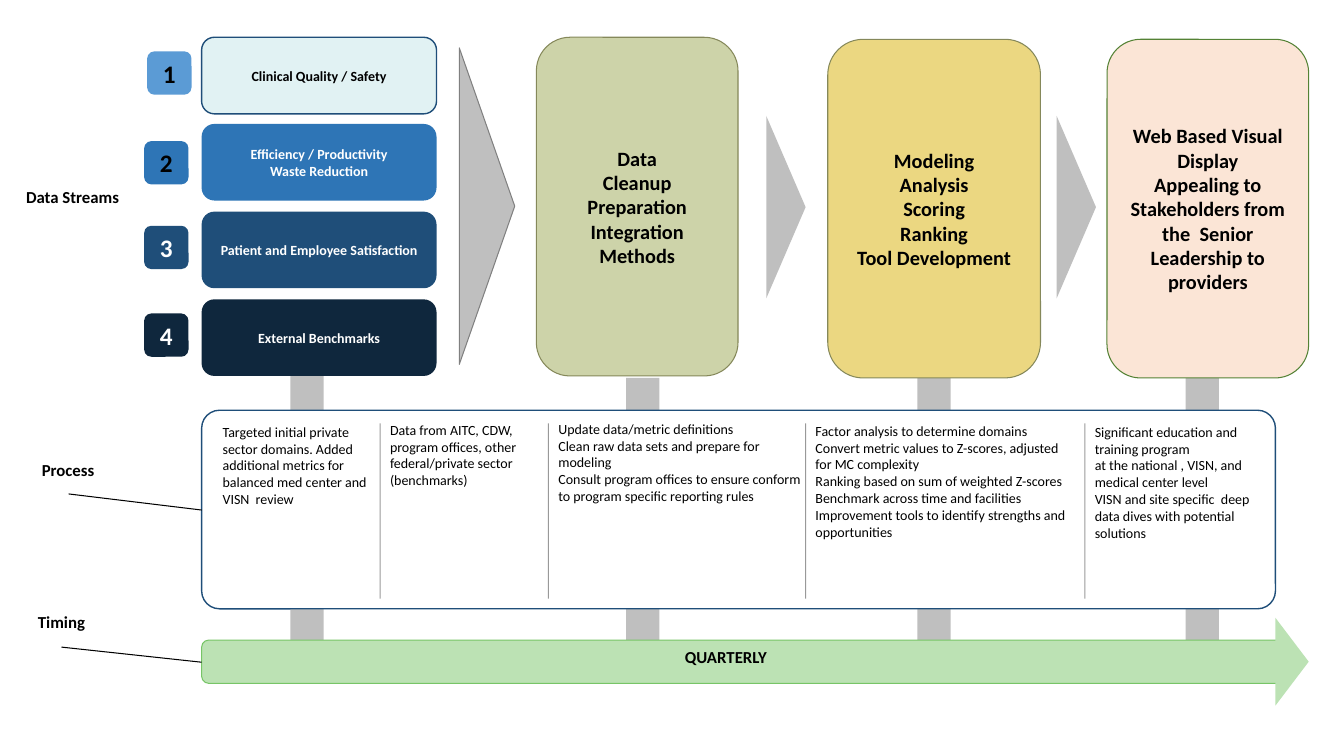
from lxml import etree
from pptx import Presentation
from pptx import util as u
from pptx.dml.color import RGBColor
from pptx.enum import shapes, text
from pptx.oxml.ns import qn

PX = 9144  # EMU in one px, 100 px to the inch
BLACK, WHITE, GREY, NAVY, OLIVE = "000000", "FFFFFF", "BFBFBF", "1F4E79", "85885A"
GREEN = "BCE2B4"

# fill, line, text colour, badge left, badge top, badge fill, digit colour, lines
STREAMS = [
    ("E1F2F3", NAVY, BLACK, 146, 51, "5B9BD5", BLACK, ["Clinical Quality / Safety"]),
    ("2E75B6", None, WHITE, 143, 140, "2E75B6", BLACK,
     ["Efficiency / Productivity", "Waste Reduction"]),
    (NAVY, None, WHITE, 143, 224, NAVY, WHITE, ["Patient and Employee Satisfaction"]),
    ("0F273D", None, WHITE, 143, 311, "0F273D", WHITE, ["External Benchmarks"]),
]

# left, top, width, fill, line, lines
STAGES = [
    (532, 37, 200, "CDD3A9", OLIVE,
     ["Data", "Cleanup", "Preparation", "Integration", "Methods"]),
    (821, 39, 211, "EBD781", OLIVE,
     ["Modeling", "Analysis", "Scoring", "Ranking", "Tool Development"]),
    (1098, 39, 200, "FBE5D6", "548235",
     ["Web Based Visual Display",
      "Appealing to Stakeholders from the  Senior Leadership to providers"]),
]

# left, top, width, height, lines
PROCESS_NOTES = [
    (211, 415, 177, 94,
     ["Targeted initial private sector domains. Added additional metrics for "
      "balanced med center and VISN  review"]),
    (377, 413, 166, 77,
     ["Data from AITC, CDW, program offices, other federal/private sector (benchmarks)"]),
    (544, 412, 266, 94,
     ["Update data/metric definitions",
      "Clean raw data sets and prepare for modeling",
      "Consult program offices to ensure conform to program specific reporting rules"]),
    (799, 414, 277, 128,
     ["Factor analysis to determine domains",
      "Convert metric values to Z-scores, adjusted for MC complexity",
      "Ranking based on sum of weighted Z-scores",
      "Benchmark across time and facilities",
      "Improvement tools to identify strengths and opportunities"]),
    (1076, 415, 189, 128,
     ["Significant education and training program",
      "at the national , VISN, and medical center level",
      "VISN and site specific  deep data dives with potential solutions"]),
]


def rgb(value):
    return RGBColor.from_string(value)


class Board:
    """Holds the text style and the current slide; lengths are in px."""

    font = "Calibri"

    def __init__(self, page):
        self.page = page

    def set_text(self, frame, lines, size, color, bold, align):
        frame.word_wrap = True
        frame.text = "\n".join(lines)
        for para in frame.paragraphs:
            para.alignment = align
            for span in para.runs:
                span.font.name = self.font
                span.font.size = u.Pt(size)
                span.font.bold = bold
                span.font.color.rgb = rgb(color)

    def shape(self, kind, frame, fill, line=None, weight=0.75):
        box = self.page.shapes.add_shape(kind, *(n * PX for n in frame))
        box.shadow.inherit = False
        box.fill.solid()
        box.fill.fore_color.rgb = rgb(fill)
        if line:
            box.line.color.rgb = rgb(line)
            box.line.width = u.Pt(weight)
        else:
            box.line.fill.background()
        return box

    def card(self, frame, fill, line=None, weight=0.75, lines=(), size=10,
             color=BLACK, corner=None):
        box = self.shape(shapes.MSO_SHAPE.ROUNDED_RECTANGLE, frame, fill, line, weight)
        if corner is not None:
            box.adjustments[0] = corner
        if lines:
            box.text_frame.vertical_anchor = text.MSO_ANCHOR.MIDDLE
            self.set_text(box.text_frame, lines, size, color, True, text.PP_ALIGN.CENTER)

    def bar(self, frame):
        self.shape(shapes.MSO_SHAPE.RECTANGLE, frame, GREY)

    def pointer(self, left, top, width, height, fill=GREY, line=None):
        """Triangle pointing right that fills the given area once turned."""
        shift = (height - width) // 2
        frame = (left - shift, top + shift, height, width)
        self.shape(shapes.MSO_SHAPE.ISOSCELES_TRIANGLE, frame, fill, line).rotation = 90

    def label(self, frame, lines, size=12, bold=True, align=text.PP_ALIGN.CENTER):
        box = self.page.shapes.add_textbox(*(n * PX for n in frame))
        self.set_text(box.text_frame, lines, size, BLACK, bold, align)

    def line(self, start, end, opacity=100):
        link = self.page.shapes.add_connector(
            shapes.MSO_CONNECTOR.STRAIGHT, *(n * PX for n in start + end))
        link.line.color.rgb = rgb(BLACK)
        link.line.width = u.Pt(0.75)
        properties = link._element.spPr
        if opacity < 100:
            color = properties.find(".//" + qn("a:srgbClr"))
            etree.SubElement(color, qn("a:alpha")).set("val", str(opacity * 1000))
        etree.SubElement(properties, qn("a:effectLst"))


def draw_flow(board):
    for left, top in ((288, 364), (621, 375), (910, 375), (1176, 375)):
        board.bar((left, top, 33, 635 - top))
    for i, (fill, line, color, x, y, badge, digit, lines) in enumerate(STREAMS):
        board.card((200, 37 + 260 * i // 3, 233, 76), fill, line, 1, lines, 10, color)
        board.card((x, y, 44, 43), badge, lines=[str(i + 1)], size=18, color=digit)
    for left, top, width, fill, line, lines in STAGES:
        board.card((left, top, width, 336), fill, line, lines=lines, size=14.5)
    board.pointer(455, 48, 55, 314, line="808080")
    for left in (760, 1048):
        board.pointer(left, 115, 39, 181)
    board.label((11, 180, 122, 66), ["Data Streams"])


def draw_process(board):
    board.card((200, 407, 1065, 197), WHITE, NAVY, 1, corner=0.09)
    for i, (left, top, width, height, lines) in enumerate(PROCESS_NOTES):
        board.label((left, top, width, height), lines, 10, False, text.PP_ALIGN.LEFT)
        if i:
            board.line((left, 420), (left, 594), opacity=40)
    board.label((0, 451, 135, 39), ["Process"])
    board.line((200, 506), (68, 490))


def draw_timing(board):
    board.card((200, 635, 1076, 43), GREEN, "77C567")
    board.pointer(1265, 613, 33, 87, GREEN)
    board.label((232, 637, 976, 39), ["QUARTERLY"])
    board.label((0, 602, 122, 39), ["Timing"])
    board.line((200, 657), (61, 642))


def main():
    deck = Presentation()
    deck.slide_width, deck.slide_height = 1333 * PX, 750 * PX
    board = Board(deck.slides.add_slide(deck.slide_layouts[6]))
    draw_flow(board)
    draw_process(board)
    draw_timing(board)
    deck.save("out.pptx")


if __name__ == "__main__":
    main()
